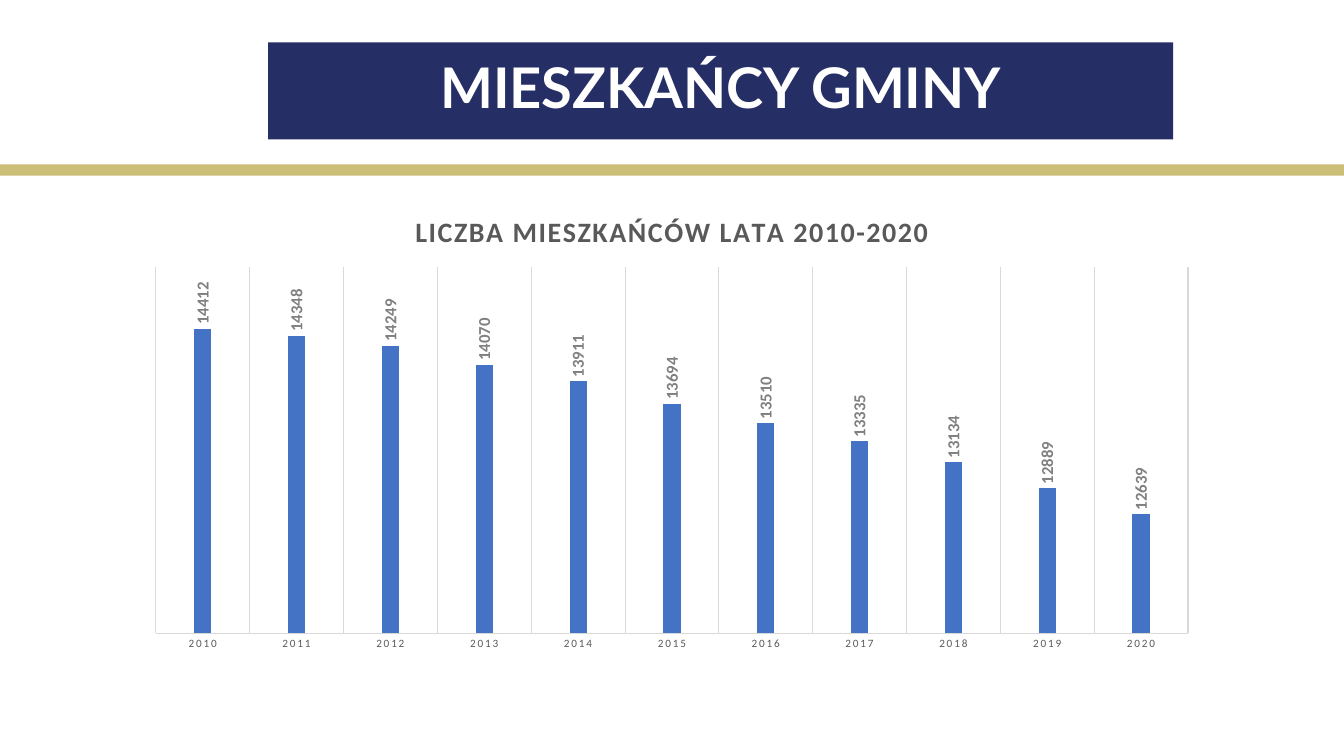
from dataclasses import dataclass

from lxml import etree
from pptx import Presentation
from pptx.chart.data import CategoryChartData
from pptx.dml.color import RGBColor
from pptx.enum.chart import XL_CHART_TYPE as ChartType
from pptx.enum.chart import XL_LABEL_POSITION as LabelPosition
from pptx.enum.chart import XL_TICK_MARK as TickMark
from pptx.enum.shapes import MSO_SHAPE as Shape
from pptx.enum.text import MSO_ANCHOR as Anchor
from pptx.enum.text import MSO_AUTO_SIZE as AutoSize
from pptx.enum.text import PP_ALIGN as Align
from pptx.oxml import parse_xml
from pptx.oxml.ns import nsdecls
from pptx.util import Pt

PAGE_WIDTH, PAGE_HEIGHT = 960, 540
CHART_TITLE = "LICZBA MIESZKAŃCÓW LATA 2010-2020"
YEARS = range(2010, 2021)
RESIDENTS = (14412, 14348, 14249, 14070, 13911, 13694,
             13510, 13335, 13134, 12889, 12639)


@dataclass(frozen=True)
class Theme:
    heading_font: str = "Lato"
    chart_font: str = "Calibri"
    navy: str = "262F65"
    gold: str = "CBBE77"
    white: str = "FFFFFF"
    black: str = "000000"
    bar: str = "4472C4"
    text: str = "595959"
    label: str = "808080"
    grid: str = "D9D9D9"
    heading_size: float = 40
    chart_title_size: float = 20
    label_size: float = 12
    chart_size: float = 10
    axis_size: float = 8


class SlideBuilder:
    def __init__(self, deck, theme):
        self.theme = theme
        self.page = deck.slides.add_slide(deck.slide_layouts[5])

    def style_font(self, font, name, size, color, bold=False):
        font.name, font.size, font.bold = name, Pt(size), bold
        font.color.rgb = RGBColor.from_string(color)

    def style_line(self, line):
        line.color.rgb = RGBColor.from_string(self.theme.grid)
        line.width = Pt(0.75)

    def add_band(self, left, top, width, height):
        band = self.page.shapes.add_shape(
            Shape.RECTANGLE, Pt(left), Pt(top), Pt(width), Pt(height))
        band.shadow.inherit = False
        band.fill.solid()
        band.fill.fore_color.rgb = RGBColor.from_string(self.theme.gold)
        band.line.fill.background()

    def set_title(self, text, left, top, width, height):
        theme = self.theme
        title = self.page.shapes.title
        title.left, title.top = Pt(left), Pt(top)
        title.width, title.height = Pt(width), Pt(height)
        title.fill.solid()
        title.fill.fore_color.rgb = RGBColor.from_string(theme.navy)
        frame = title.text_frame
        frame.word_wrap = True
        frame.auto_size = AutoSize.NONE
        frame.vertical_anchor = Anchor.MIDDLE
        para = frame.paragraphs[0]
        para.alignment = Align.CENTER
        para.line_spacing = 0.9
        span = para.add_run()
        span.text = text
        self.style_font(span.font, theme.heading_font, theme.heading_size, theme.white, True)

    def add_column_chart(self, name, categories, values, left, top, width, height):
        theme = self.theme
        data = CategoryChartData()
        data.categories = [str(category) for category in categories]
        data.add_series(name, values)
        chart = self.page.shapes.add_chart(
            ChartType.COLUMN_CLUSTERED, Pt(left), Pt(top), Pt(width), Pt(height), data).chart
        self.style_font(chart.font, theme.chart_font, theme.chart_size, theme.black)
        chart.has_legend = False
        self.set_chart_title(chart, name)
        self.style_axes(chart)
        self.style_columns(chart.plots[0])
        self.place_plot(chart, x=0.02, y=0.16, w=0.96, h=0.78)

    def set_chart_title(self, chart, text):
        theme = self.theme
        chart.has_title = True
        chart.chart_title.include_in_layout = False
        span = chart.chart_title.text_frame.paragraphs[0].add_run()
        span.text = text
        self.style_font(span.font, theme.chart_font, theme.chart_title_size, theme.text, True)
        span._r.get_or_add_rPr().set("spc", "100")

    def style_axes(self, chart):
        theme = self.theme
        years = chart.category_axis
        years.major_tick_mark = years.minor_tick_mark = TickMark.NONE
        years.has_major_gridlines = True
        self.style_line(years.major_gridlines.format.line)
        self.style_line(years.format.line)
        self.style_font(years.tick_labels.font, theme.chart_font, theme.axis_size, theme.text)
        years._element.xpath(".//a:defRPr")[0].set("spc", "120")
        scale = chart.value_axis
        scale.minimum_scale, scale.maximum_scale = 11500, 15000
        scale.has_major_gridlines = False
        scale.visible = False

    def style_columns(self, plot):
        theme = self.theme
        plot.gap_width, plot.overlap = 444, -90
        plot.vary_by_categories = False
        series = plot.series[0]
        series.format.fill.solid()
        series.format.fill.fore_color.rgb = RGBColor.from_string(theme.bar)
        labels = series.data_labels
        labels.show_value = True
        labels.position = LabelPosition.OUTSIDE_END
        self.style_font(labels.font, theme.chart_font, theme.label_size, theme.label, True)
        body = labels._element.xpath(".//a:bodyPr")[0]
        body.set("rot", "-5400000")
        body.set("vert", "horz")

    def place_plot(self, chart, **shares):
        """Fix the inner plot area as shares of the chart's size."""
        area = chart._chartSpace.xpath("c:chart/c:plotArea")[0]
        for old in area.xpath("c:layout"):
            area.remove(old)
        layout = parse_xml(f"<c:layout {nsdecls('c')}><c:manualLayout/></c:layout>")
        settings = {"layoutTarget": "inner", "xMode": "edge", "yMode": "edge", **shares}
        namespace = layout.nsmap["c"]
        for tag, value in settings.items():
            etree.SubElement(layout[0], f"{{{namespace}}}{tag}").set("val", str(value))
        area.insert(0, layout)


def main():
    deck = Presentation()
    deck.slide_width, deck.slide_height = Pt(PAGE_WIDTH), Pt(PAGE_HEIGHT)
    slide = SlideBuilder(deck, Theme())
    slide.add_band(0, 117.5, PAGE_WIDTH, 8)
    slide.set_title("MIESZKAŃCY GMINY", 191.5, 30.25, 646.5, 69.25)
    slide.add_column_chart(CHART_TITLE, YEARS, RESIDENTS, 96, 137.5, 768, 335)
    deck.save("out.pptx")


if __name__ == "__main__":
    main()
